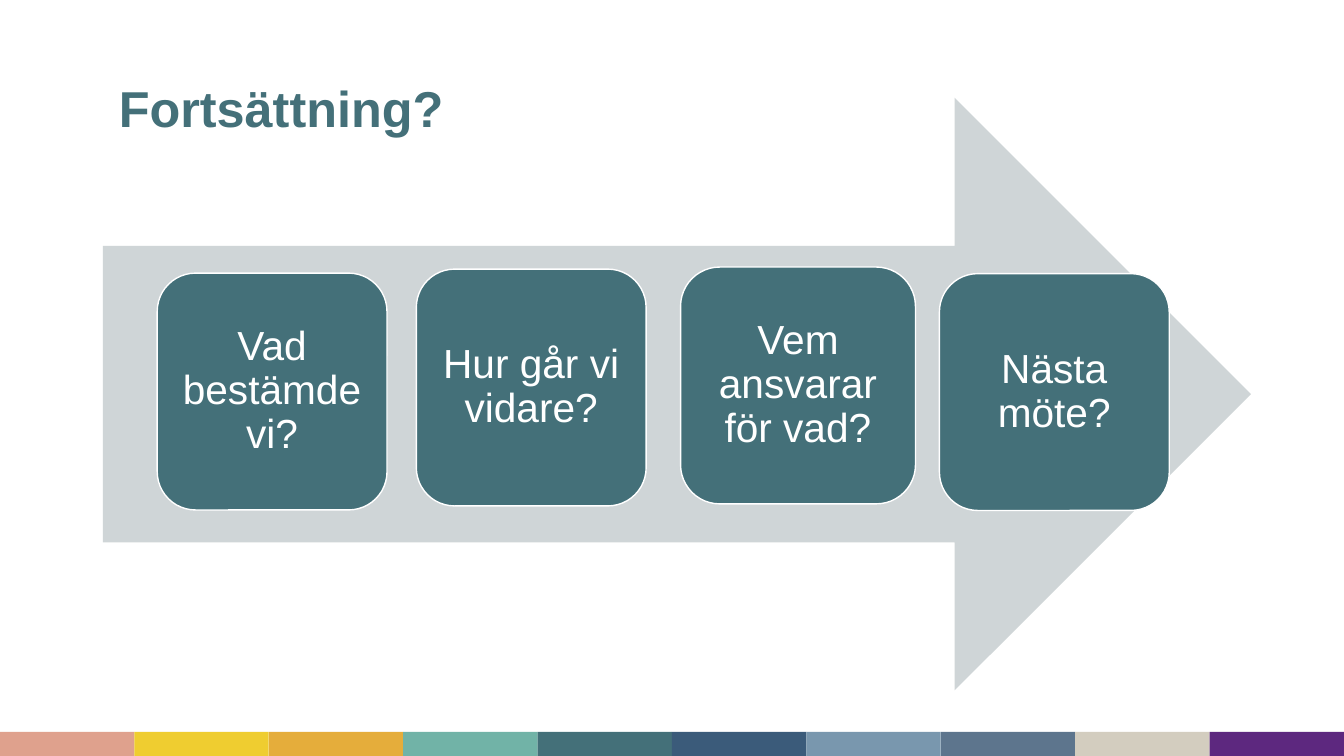
from pptx import Presentation
from pptx.dml.color import RGBColor as RGB
from pptx.enum.shapes import MSO_SHAPE as Shape
from pptx.enum.text import MSO_ANCHOR as Anchor, PP_ALIGN as Align
from pptx.util import Inches, Pt

THEME = {
    "teal": "447079",
    "arrow": "CFD5D7",
    "white": "FFFFFF",
    "band": ["DFA18D", "EFCD30", "E5AD3B", "71B3A7", "447079",
             "3B5B7A", "7997AE", "5D758D", "D3CDBF", "5D287F"],
    "font": "Arial",
    "title_size": Pt(36),
    "card_size": Pt(29),
}

prs = Presentation()
prs.slide_width, prs.slide_height = Inches(13.33), Inches(7.5)
s = prs.slides.add_slide(prs.slide_layouts[6])


def box(left, top, width, height):
    """Turn percentages of the slide's size into lengths."""
    w, h = prs.slide_width / 100, prs.slide_height / 100
    return [round(v) for v in (left * w, top * h, width * w, height * h)]


def add_block(kind, place, fill):
    sp = s.shapes.add_shape(kind, *box(*place))
    sp.shadow.inherit = False
    sp.fill.solid()
    sp.fill.fore_color.rgb = RGB.from_string(fill)
    sp.line.fill.background()
    return sp


# Colour band along the bottom
step = 100 / len(THEME["band"])
for i, color in enumerate(THEME["band"]):
    add_block(Shape.RECTANGLE, (i * step, 96.8, step, 3.2), color)

# Arrow behind the cards
add_block(Shape.RIGHT_ARROW, (7.65, 12.93, 85.43, 78.4), THEME["arrow"])

# Question cards: text, left, top, width
cards = [
    ("Vad bestämde vi?", 11.7, 36.13, 17.1),
    ("Hur går vi vidare?", 30.98, 35.6, 17.1),
    ("Nästa möte?", 69.9, 36.2, 17.1),
    ("Vem ansvarar för vad?", 50.64, 35.33, 17.48),
]
for text, left, top, width in cards:
    sp = add_block(Shape.ROUNDED_RECTANGLE, (left, top, width, 31.33), THEME["teal"])
    sp.line.color.rgb = RGB.from_string(THEME["white"])
    sp.line.width = Pt(1)
    tf = sp.text_frame
    tf.word_wrap = True
    tf.vertical_anchor = Anchor.MIDDLE
    for side in ("left", "top", "right", "bottom"):
        setattr(tf, f"margin_{side}", Inches(0.12))
    p = tf.paragraphs[0]
    p.alignment, p.line_spacing = Align.CENTER, 0.9
    r = p.add_run()
    r.text = text
    r.font.color.rgb = RGB.from_string(THEME["white"])
    for name, value in {"name": THEME["font"], "size": THEME["card_size"]}.items():
        setattr(r.font, name, value)

# Title
tf = s.shapes.add_textbox(*box(8.1, 5.73, 59.04, 16.93)).text_frame
tf.word_wrap = True
tf.vertical_anchor = Anchor.MIDDLE
r = tf.paragraphs[0].add_run()
r.text = "Fortsättning?"
r.font.color.rgb = RGB.from_string(THEME["teal"])
for name, value in {"name": THEME["font"], "size": THEME["title_size"], "bold": True}.items():
    setattr(r.font, name, value)

prs.save("out.pptx")
